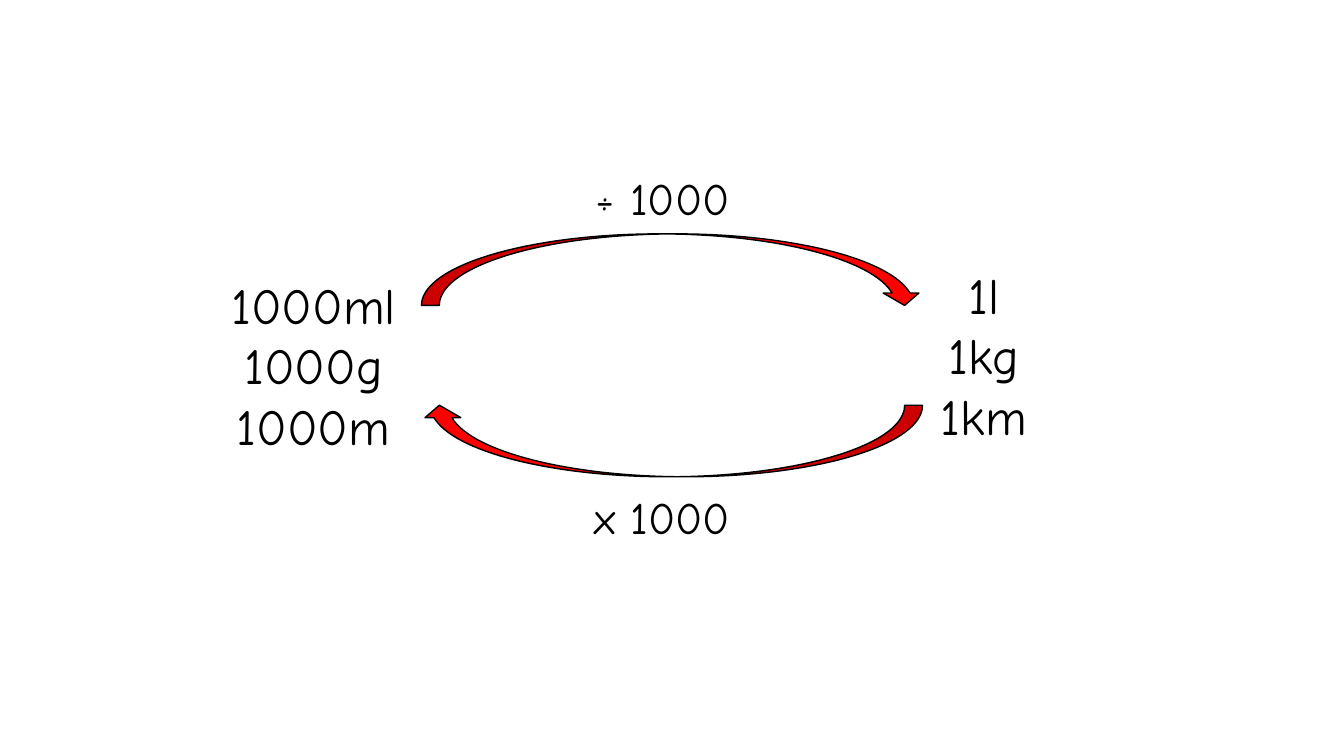
from pptx import Presentation
from pptx.dml.color import RGBColor
from pptx.enum.shapes import MSO_SHAPE
from pptx.enum.text import MSO_AUTO_SIZE, PP_ALIGN
from pptx.util import Pt

PX = 9144
FONT = "Comic Neue"
COLORS = {"ink": "000000", "arrow": "FF0000"}
SLIDE_SIZE = (1333, 750)

LABELS = [
    (["1000ml", "1000g", "1000m"], (216, 267, 190, 192), 36),
    (["1l", "1kg", "1km"], (921, 257, 110, 192), 36),
    (["÷ 1000"], (579, 164, 157, 64), 32),
    (["x 1000"], (576, 481, 162, 64), 32),
]
ARROW_LEFT, ARROW_WIDTH, ARROW_HEIGHT = 418, 497, 71
ARROWS = [(232, 0), (402, 180)]
ARROW_ADJUSTMENTS = (0.25, 0.5, 0.173)


def color(name):
    return RGBColor.from_string(COLORS[name])


def place(*lengths):
    return [length * PX for length in lengths]


def add_label(page, lines, area, size, font=FONT, ink="ink"):
    frame = page.shapes.add_textbox(*place(*area)).text_frame
    frame.word_wrap = False
    frame.auto_size = MSO_AUTO_SIZE.SHAPE_TO_FIT_TEXT
    for index, line in enumerate(lines):
        para = frame.add_paragraph() if index else frame.paragraphs[0]
        para.alignment = PP_ALIGN.CENTER
        span = para.add_run()
        span.text = line
        span.font.name = font
        span.font.size = Pt(size)
        span.font.color.rgb = color(ink)


def add_arrow(page, top, rotation):
    area = place(ARROW_LEFT, top, ARROW_WIDTH, ARROW_HEIGHT)
    arrow = page.shapes.add_shape(MSO_SHAPE.CURVED_DOWN_ARROW, *area)
    for index, value in enumerate(ARROW_ADJUSTMENTS):
        arrow.adjustments[index] = value
    arrow.rotation = rotation
    arrow.shadow.inherit = False
    arrow.fill.solid()
    arrow.fill.fore_color.rgb = color("arrow")
    arrow.line.color.rgb = color("ink")
    arrow.line.width = Pt(1)


def main():
    deck = Presentation()
    deck.slide_width, deck.slide_height = place(*SLIDE_SIZE)
    page = deck.slides.add_slide(deck.slide_layouts[6])
    for top, rotation in ARROWS:
        add_arrow(page, top, rotation)
    for lines, area, size in LABELS:
        add_label(page, lines, area, size)
    deck.save("out.pptx")


if __name__ == "__main__":
    main()
